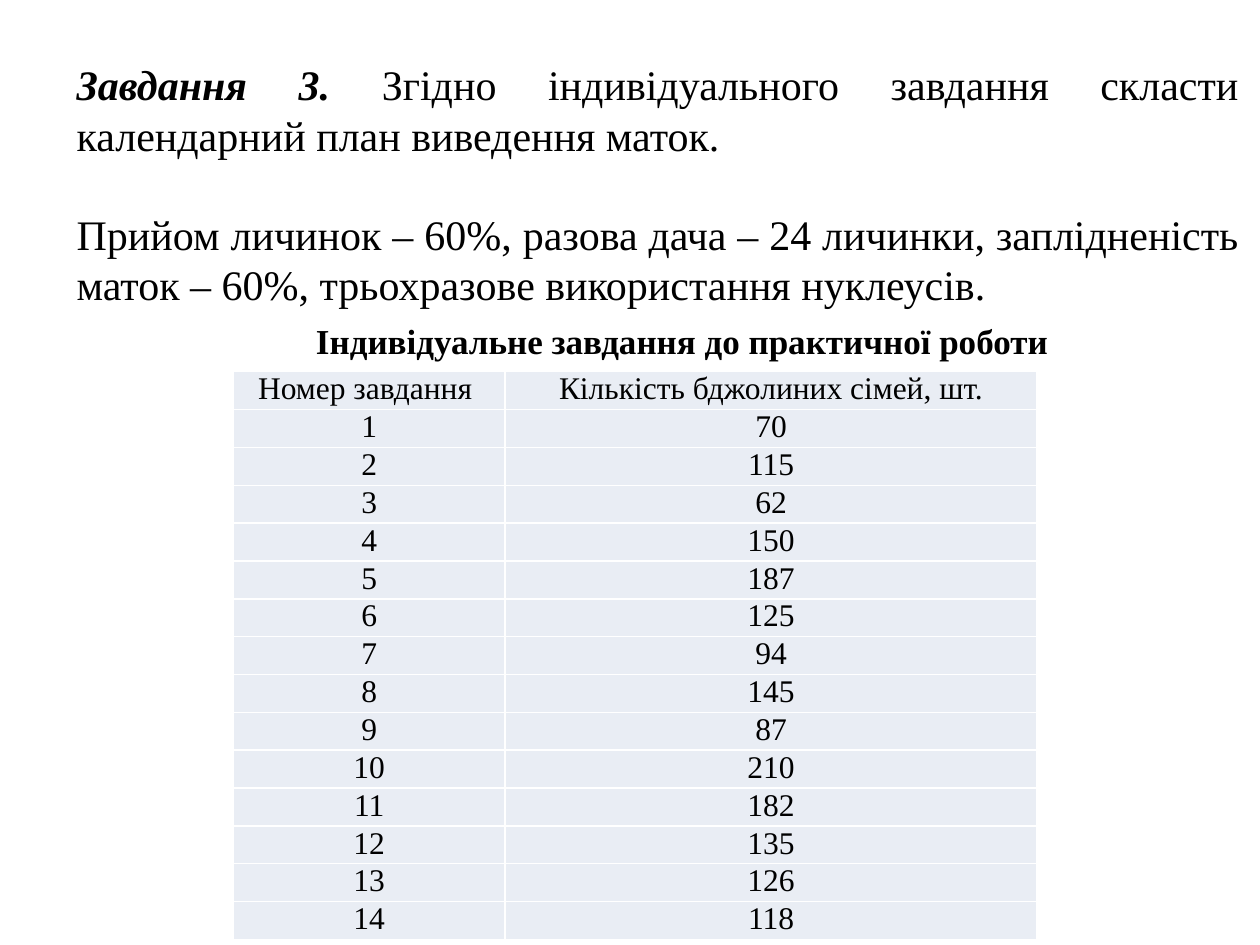
"""Build the slide with the queen rearing task and its table."""
from pptx import Presentation
from pptx.dml.color import RGBColor
from pptx.enum.text import MSO_ANCHOR, PP_ALIGN
from pptx.util import Inches, Pt

FONT, INK, PALE = "Times New Roman", "000000", "E9EDF4"
TASK = [
    [("Завдання 3. ", True),
     ("Згідно індивідуального завдання скласти календарний план виведення маток.", False)],
    [("Прийом личинок – 60%, разова дача – 24 личинки, заплідненість маток – 60%, "
      "трьохразове використання нуклеусів.", False)],
]
TITLE = "Індивідуальне завдання до практичної роботи"
HEAD = ("Номер завдання ", "Кількість бджолиних сімей, шт.")
HIVES = [70, 115, 62, 150, 187, 125, 94, 145, 87, 210, 182, 135, 126, 118]
WIDTHS, ROW = (2.16, 4.22), 0.3


def color(code):
    return RGBColor.from_string(code)


def write(para, text, size=18, bold=False, italic=False, align=PP_ALIGN.CENTER):
    para.alignment = align
    run = para.add_run()
    run.text = text
    font = run.font
    font.name, font.size, font.bold, font.italic = FONT, Pt(size), bold, italic
    font.color.rgb = color(INK)


def add_box(slide, left, top, width, height, wrap=True):
    box = slide.shapes.add_textbox(*map(Inches, (left, top, width, height)))
    frame = box.text_frame
    frame.word_wrap = wrap
    frame.vertical_anchor = MSO_ANCHOR.MIDDLE
    return frame


def add_task(slide):
    frame = add_box(slide, 0.51, 0.21, 9.42, 2.5)
    for i, runs in enumerate(TASK):
        para = frame.add_paragraph() if i else frame.paragraphs[0]
        para.space_before = Pt(28 if i else 0)
        for text, strong in runs:
            write(para, text, size=24, bold=strong, italic=strong, align=PP_ALIGN.JUSTIFY)


def add_grid(slide):
    rows = [HEAD, *enumerate(HIVES, 1)]
    table = slide.shapes.add_table(
        len(rows), len(HEAD), Inches(1.85), Inches(2.95),
        Inches(sum(WIDTHS)), Inches(ROW * len(rows))).table
    table.first_row = table.horz_banding = False
    for col, width in zip(table.columns, WIDTHS):
        col.width = Inches(width)
    for line, row in zip(table.rows, rows):
        line.height = Inches(ROW)
        for cell, value in zip(line.cells, row):
            cell.margin_left = cell.margin_right = Inches(0.07)
            cell.margin_top = cell.margin_bottom = 0
            cell.fill.solid()
            cell.fill.fore_color.rgb = color(PALE)
            write(cell.text_frame.paragraphs[0], str(value))


def main():
    deck = Presentation()
    deck.slide_width, deck.slide_height = Inches(10), Inches(7.5)
    slide = deck.slides.add_slide(deck.slide_layouts[6])
    add_task(slide)
    add_grid(slide)
    title = add_box(slide, 2.41, 2.48, 6.06, 0.44, wrap=False)
    write(title.paragraphs[0], TITLE, size=20, bold=True, align=PP_ALIGN.LEFT)
    deck.save("out.pptx")


if __name__ == "__main__":
    main()
